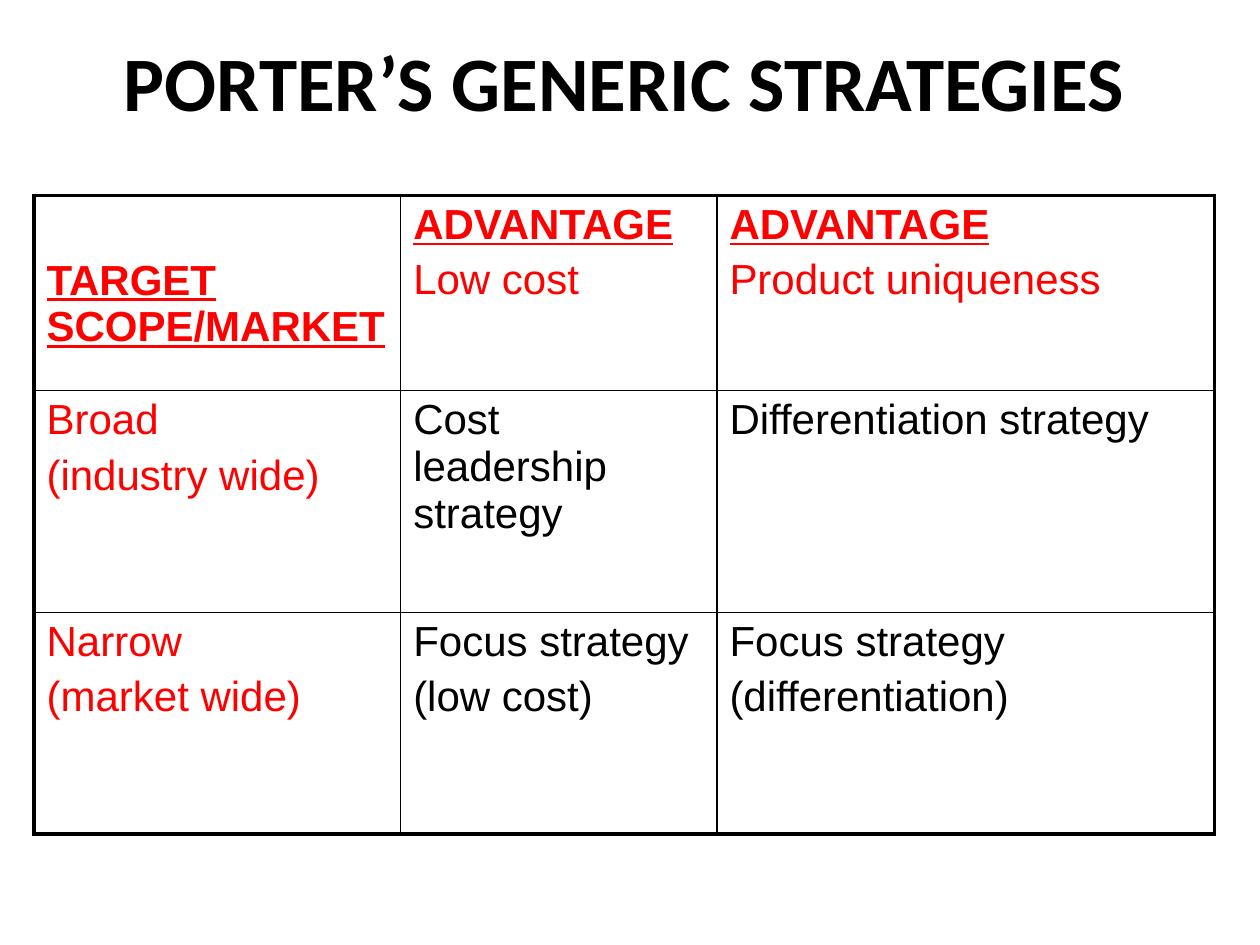
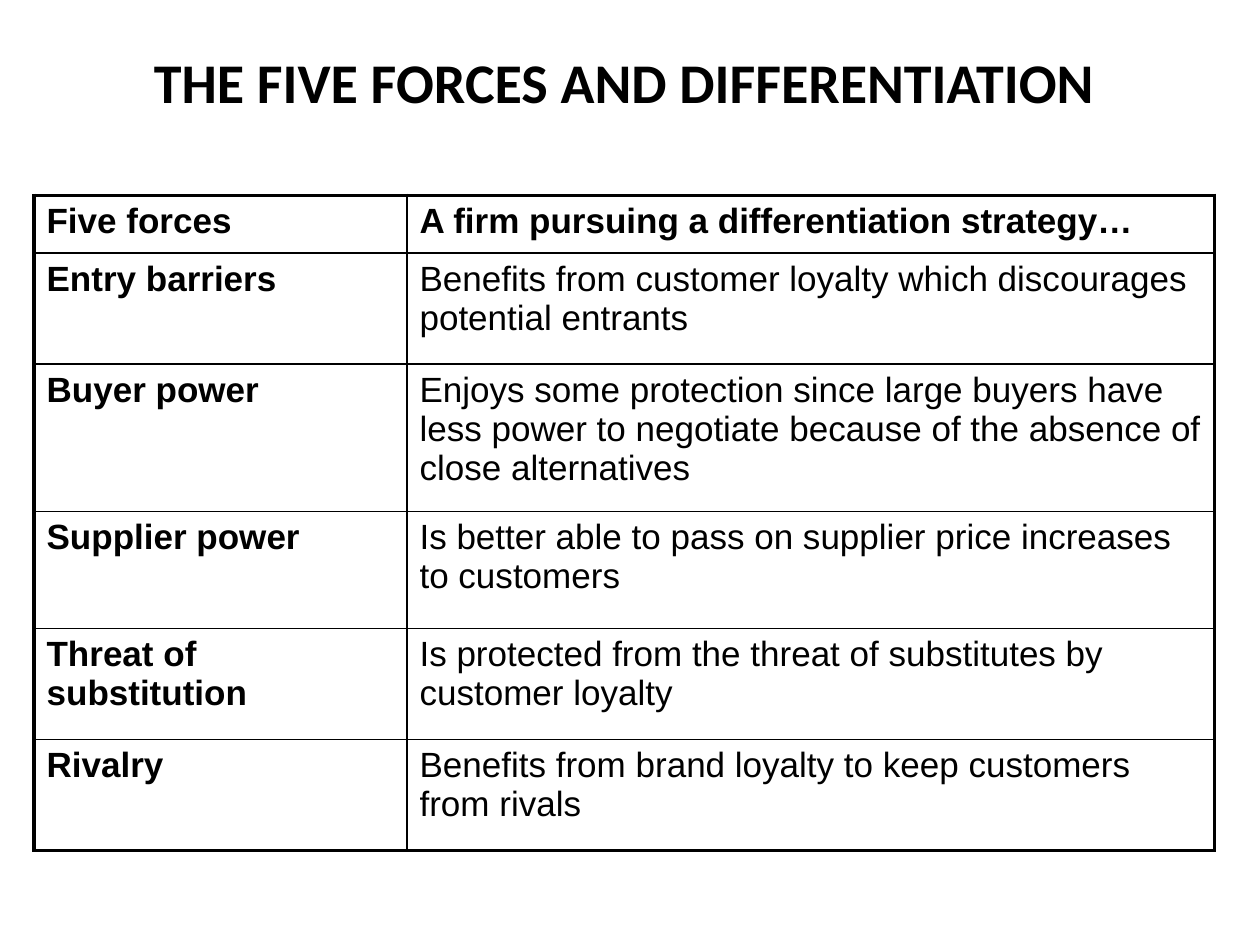
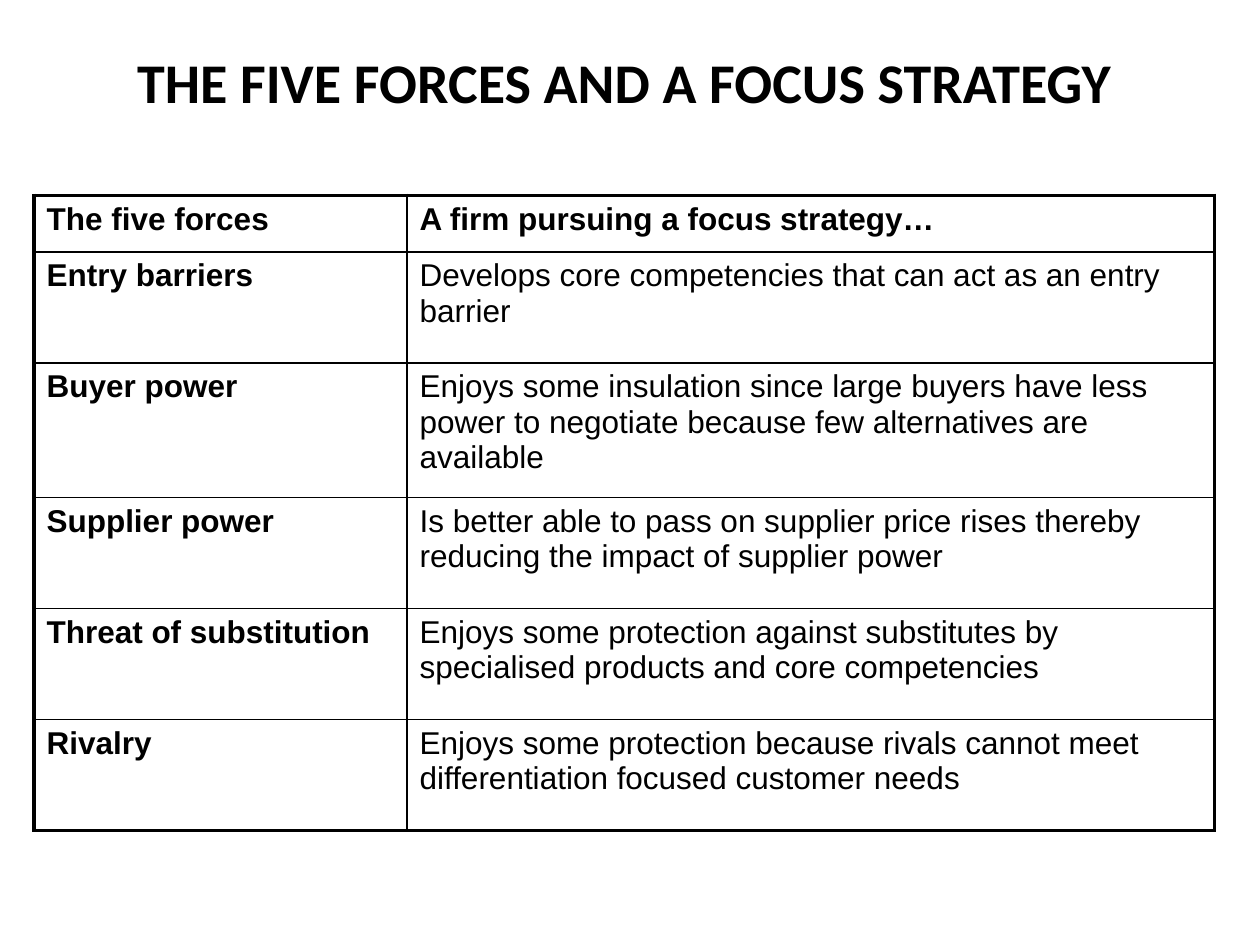
import pptx
import pptx.util
import pptx.dml.color
import pptx.enum.text
import pptx.oxml
import pptx.oxml.ns
from pptx.util import Inches, Pt

BLACK = pptx.dml.color.RGBColor(0, 0, 0)
RED = pptx.dml.color.RGBColor(255, 0, 0)
LEFT, WIDTH = 0.27, 9.37
TITLE_TOP, TITLE_HIGH = 0.13, 1.02
TABLE_TOP = 1.55
THICK, THIN = 2.25, 1

# Content: a line break in a cell starts a new paragraph
GRID = {
    "title": "PORTER’S GENERIC STRATEGIES", "title_size": 44, "size": 24,
    "cols": [2.91, 2.51, 3.95], "highs": [1.55, 1.76, 1.76],
    "rows": [
        ("TARGET SCOPE/MARKET", "ADVANTAGE\nLow cost", "ADVANTAGE\nProduct uniqueness"),
        ("Broad\n(industry wide)", "Cost leadership strategy", "Differentiation strategy"),
        ("Narrow\n(market wide)", "Focus strategy\n(low cost)",
         "Focus strategy\n(differentiation)"),
    ],
}
DIFFER = {
    "title": "THE FIVE FORCES AND DIFFERENTIATION", "title_size": 32, "size": 20,
    "cols": [2.96, 6.41], "highs": [0.46, 0.88, 1.17, 0.93, 0.88, 0.88],
    "rows": [
        ("Five forces", "A firm pursuing a differentiation strategy…"),
        ("Entry barriers",
         "Benefits from customer loyalty which discourages potential entrants"),
        ("Buyer power",
         "Enjoys some protection since large buyers have less power to negotiate "
         "because of the absence of close alternatives"),
        ("Supplier power", "Is better able to pass on supplier price increases to customers"),
        ("Threat of substitution",
         "Is protected from the threat of substitutes by customer loyalty"),
        ("Rivalry", "Benefits from brand loyalty to keep customers from rivals"),
    ],
}
FOCUS = {
    "title": "THE FIVE FORCES AND A FOCUS STRATEGY", "title_size": 32, "size": 18,
    "cols": [2.96, 6.41], "highs": [0.45, 0.88, 1.07, 0.88, 0.88, 0.88],
    "rows": [
        ("The five forces", "A firm pursuing a focus strategy…"),
        ("Entry barriers", "Develops core competencies that can act as an entry barrier"),
        ("Buyer power",
         "Enjoys some insulation since large buyers have less power to negotiate "
         "because few alternatives are available"),
        ("Supplier power",
         "Is better able to pass on supplier price rises thereby reducing the impact "
         "of supplier power"),
        ("Threat of substitution",
         "Enjoys some protection against substitutes by specialised products and "
         "core competencies"),
        ("Rivalry",
         "Enjoys some protection because rivals cannot meet differentiation focused "
         "customer needs"),
    ],
}


def set_font(para, name, size, color, bold):
    font = para.font
    font.name, font.size, font.bold = name, Pt(size), bold
    font.color.rgb = color


def add_title(slide, text, size):
    title = slide.shapes.title
    title.left, title.top = Inches(LEFT), Inches(TITLE_TOP)
    title.width, title.height = Inches(WIDTH), Inches(TITLE_HIGH)
    frame = title.text_frame
    frame.text = text
    frame.auto_size = pptx.enum.text.MSO_AUTO_SIZE.NONE
    frame.vertical_anchor = pptx.enum.text.MSO_ANCHOR.MIDDLE
    para = frame.paragraphs[0]
    para.alignment = pptx.enum.text.PP_ALIGN.CENTER
    set_font(para, "Calibri", size, BLACK, True)


def set_edges(cell, edges):
    """Draw the cell's sides; edges tells which lie on the table's rim."""
    props = cell._tc.get_or_add_tcPr()
    for spot, (side, rim) in enumerate(edges.items()):
        width = Pt(THICK if rim else THIN)
        props.insert(spot, pptx.oxml.parse_xml(
            f'<a:ln{side} {pptx.oxml.ns.nsdecls("a")} w="{width}"><a:solidFill>'
            f'<a:srgbClr val="{BLACK}"/></a:solidFill></a:ln{side}>'))


def add_table(slide, data, matrix):
    rows, cols, highs = data["rows"], data["cols"], data["highs"]
    table = slide.shapes.add_table(
        len(rows), len(cols), Inches(LEFT), Inches(TABLE_TOP),
        Inches(WIDTH), Inches(sum(highs))).table
    table.first_row = table.horz_banding = False
    for col, width in zip(table.columns, cols):
        col.width = Inches(width)
    for row, high in zip(table.rows, highs):
        row.height = Inches(high)

    for r, row in enumerate(rows):
        for c, text in enumerate(row):
            cell = table.cell(r, c)
            cell.fill.background()
            set_edges(cell, {"L": c == 0, "R": c == len(cols) - 1,
                             "T": r == 0, "B": r == len(rows) - 1})
            cell.text = text
            head = r == 0 or c == 0
            for n, para in enumerate(cell.text_frame.paragraphs):
                strong = r == 0 and n == 0 if matrix else head
                color = RED if matrix and head else BLACK
                set_font(para, "Arial", data["size"], color, strong)
                para.font.underline = matrix and strong
                if n:
                    para.space_before = Pt(0.2 * data["size"])
    return table


def main():
    deck = pptx.Presentation()
    deck.slide_width, deck.slide_height = Inches(10), Inches(7.5)
    for data in (GRID, DIFFER, FOCUS):
        slide = deck.slides.add_slide(deck.slide_layouts[5])
        add_title(slide, data["title"], data["title_size"])
        table = add_table(slide, data, data is GRID)
        if data is GRID:
            # The corner label sits one line lower
            table.cell(0, 0).margin_top = Inches(0.49)
    deck.save("out.pptx")


if __name__ == "__main__":
    main()
